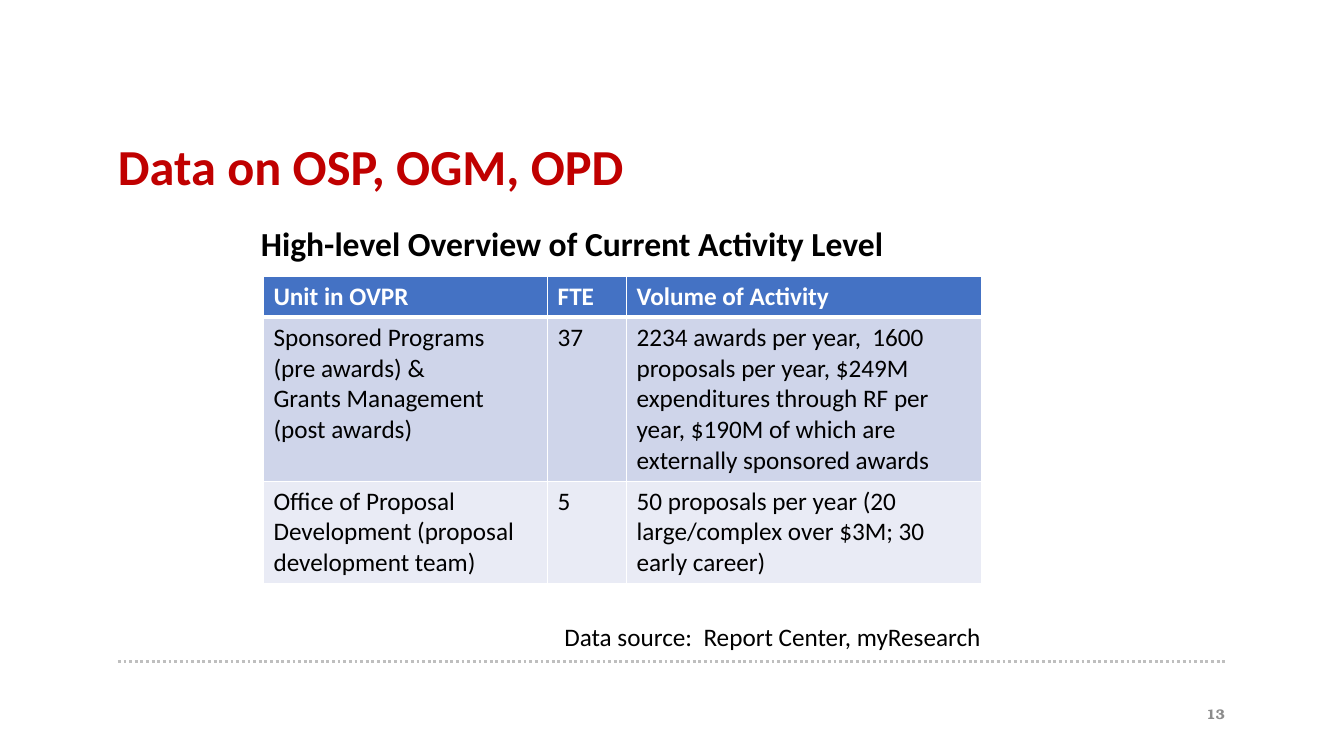
from dataclasses import dataclass

import pptx
import pptx.dml.color
import pptx.enum.dml
import pptx.enum.shapes
import pptx.enum.text
import pptx.oxml
import pptx.oxml.ns
import pptx.util

Pt = pptx.util.Pt
Align = pptx.enum.text.PP_ALIGN
Anchor = pptx.enum.text.MSO_ANCHOR

WHITE = "FFFFFF"
BLACK = "000000"
GREY = "BFBFBF"


@dataclass
class Style:
    size: float
    color: str = BLACK
    bold: bool = False
    font: str = "Calibri"


@dataclass
class Label:
    text: str
    left: float
    top: float
    width: float
    height: float
    style: Style
    align: Align = Align.LEFT
    anchor: Anchor = Anchor.TOP
    margins: tuple[float, float] = (7.2, 3.6)
    line_spacing: float = 1.0


@dataclass
class Row:
    cells: list[str]
    height: float
    fill: str
    style: Style
    top_border: float = 1
    bottom_border: float = 1


LABELS = [
    Label("Data on OSP, OGM, OPD", 84.24, 108.6, 792, 41, Style(36, "C00000", True),
          margins=(0, 0), line_spacing=0.7),
    Label("High-level Overview of Current Activity Level", 179.3, 155.5, 540, 36,
          Style(24, bold=True)),
    Label("Data source:  Report Center, myResearch", 364.3, 440, 343.4, 29, Style(18),
          align=Align.RIGHT),
    Label("13", 666, 495.4, 216, 28.8, Style(10, "8C8C8C", True, "TeX Gyre Bonum"),
          align=Align.RIGHT, anchor=Anchor.MIDDLE),
]

COLUMN_WIDTHS = [203, 56.4, 253.6]
ROWS = [
    Row(["Unit in OVPR", "FTE", "Volume of Activity"], 29.2, "4472C4",
        Style(18, WHITE, True), bottom_border=3),
    Row(["Sponsored Programs  (pre awards) &\nGrants Management (post awards)", "37",
         "2234 awards per year,  1600 proposals per year, $249M expenditures through RF "
         "per year, $190M of which are externally sponsored awards"],
        115.2, "CFD5EA", Style(18), top_border=3),
    Row(["Office of Proposal Development (proposal development team)", "5",
         "50 proposals per year (20 large/complex over $3M; 30 early career)"],
        71.5, "E9EBF5", Style(18)),
]


def rgb(value: str) -> pptx.dml.color.RGBColor:
    return pptx.dml.color.RGBColor.from_string(value)


def write_text(tf, text: str, style: Style, align: Align = Align.LEFT,
               line_spacing: float = 1.0) -> None:
    """Write each line of the text as a paragraph of one run."""
    for i, line in enumerate(text.split("\n")):
        p = tf.add_paragraph() if i else tf.paragraphs[0]
        p.alignment = align
        p.line_spacing = line_spacing
        r = p.add_run()
        r.text = line
        r.font.name = style.font
        r.font.size = Pt(style.size)
        r.font.bold = style.bold
        r.font.color.rgb = rgb(style.color)


def add_label(slide, label: Label) -> None:
    sp = slide.shapes.add_textbox(Pt(label.left), Pt(label.top),
                                  Pt(label.width), Pt(label.height))
    tf = sp.text_frame
    tf.word_wrap = True
    tf.vertical_anchor = label.anchor
    tf.margin_left = tf.margin_right = Pt(label.margins[0])
    tf.margin_top = tf.margin_bottom = Pt(label.margins[1])
    write_text(tf, label.text, label.style, label.align, label.line_spacing)


def add_footer_line(slide) -> None:
    line = slide.shapes.add_connector(pptx.enum.shapes.MSO_CONNECTOR.STRAIGHT,
                                      Pt(84.24), Pt(472.3), Pt(876.24), Pt(472.3))
    line.line.color.rgb = rgb(GREY)
    line.line.width = Pt(2)
    line.line.dash_style = pptx.enum.dml.MSO_LINE.ROUND_DOT
    line._element.spPr.append(pptx.oxml.parse_xml(
        f"<a:effectLst {pptx.oxml.ns.nsdecls('a')}/>"))


def set_borders(cell, row: Row) -> None:
    widths = {"L": 1, "R": 1, "T": row.top_border, "B": row.bottom_border}
    tc_pr = cell._tc.get_or_add_tcPr()
    for side, width in widths.items():
        tc_pr.append(pptx.oxml.parse_xml(
            f'<a:ln{side} {pptx.oxml.ns.nsdecls("a")} w="{Pt(width)}">'
            f'<a:solidFill><a:srgbClr val="{WHITE}"/></a:solidFill></a:ln{side}>'))


def add_activity_table(slide) -> None:
    frame = slide.shapes.add_table(len(ROWS), len(COLUMN_WIDTHS), Pt(188.2), Pt(197.4),
                                   Pt(sum(COLUMN_WIDTHS)),
                                   Pt(sum(row.height for row in ROWS)))
    table = frame.table
    for column, width in zip(table.columns, COLUMN_WIDTHS):
        column.width = Pt(width)
    for table_row, row in zip(table.rows, ROWS):
        table_row.height = Pt(row.height)
        for cell, text in zip(table_row.cells, row.cells):
            set_borders(cell, row)
            cell.fill.solid()
            cell.fill.fore_color.rgb = rgb(row.fill)
            write_text(cell.text_frame, text, row.style)


def main() -> None:
    prs = pptx.Presentation()
    prs.slide_width, prs.slide_height = Pt(960), Pt(540)
    slide = prs.slides.add_slide(prs.slide_layouts[6])
    add_footer_line(slide)
    add_activity_table(slide)
    for label in LABELS:
        add_label(slide, label)
    prs.save("out.pptx")


if __name__ == "__main__":
    main()
